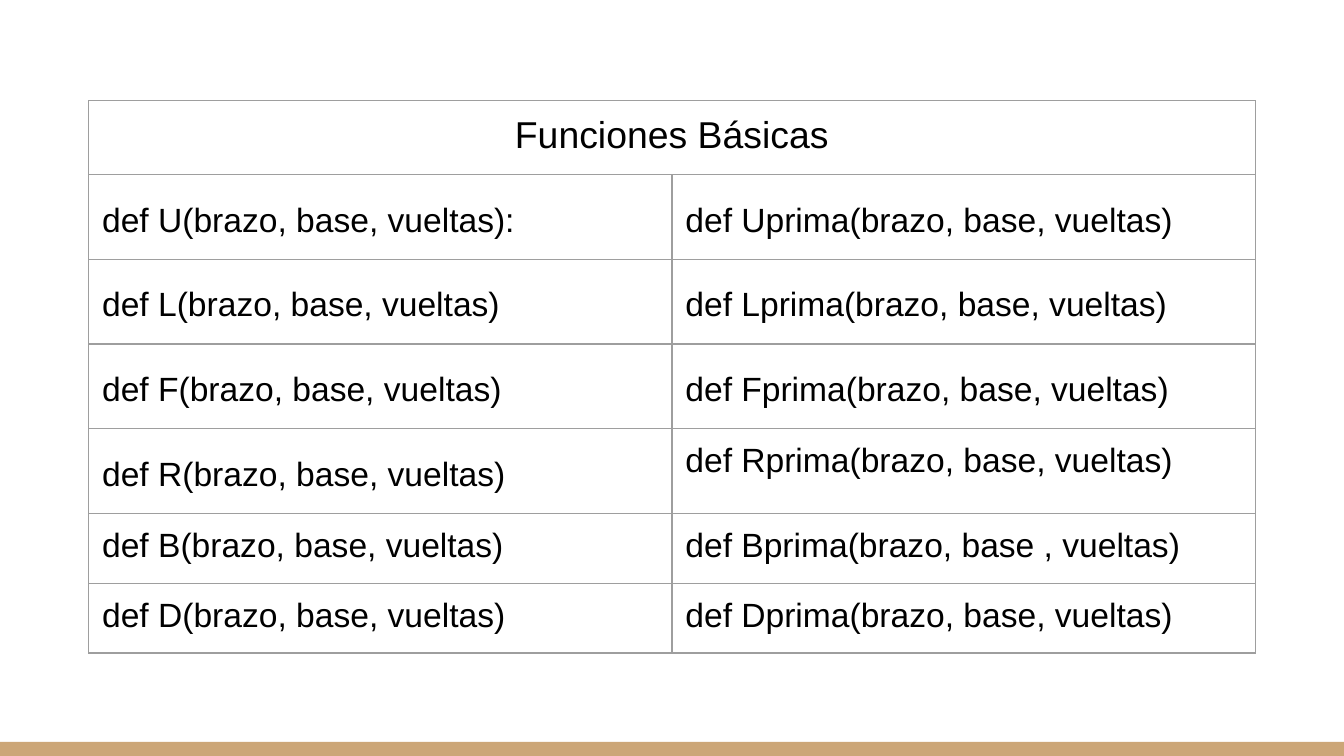
from lxml import etree
from pptx import Presentation
from pptx.dml.color import RGBColor
from pptx.enum.shapes import MSO_SHAPE
from pptx.enum.text import PP_ALIGN
from pptx.oxml.ns import qn
from pptx.util import Inches, Pt

RECT = MSO_SHAPE.RECTANGLE
LEFT, CENTER = PP_ALIGN.LEFT, PP_ALIGN.CENTER

TITLE = "Funciones Básicas"
ROWS = [
    ("def U(brazo, base, vueltas):", "def Uprima(brazo, base, vueltas)"),
    ("def L(brazo, base, vueltas)", "def Lprima(brazo, base, vueltas)"),
    ("def F(brazo, base, vueltas)", "def Fprima(brazo, base, vueltas)"),
    ("def R(brazo, base, vueltas)", "def Rprima(brazo, base, vueltas)"),
    ("def B(brazo, base, vueltas)", "def Bprima(brazo, base , vueltas)"),
    ("def D(brazo, base, vueltas)", "def Dprima(brazo, base, vueltas)"),
]
WIDE = Inches(10)
HIGH = WIDE * 9 // 16
HEIGHTS = [0.55] + [0.63] * 4 + [0.52] * 2
LOOSE = {(r, c) for r in range(1, 5) for c in range(2)} - {(4, 1)}
WIDTH = 4.34
INSET = {f"margin_{side}": Inches(0.1) for side in ("left", "right", "top", "bottom")}
BLACK, GRAY, TAN = "000000", "9E9E9E", "CCA677"


def color(code):
    return RGBColor.from_string(code)


def border(cell):
    props = cell._tc.get_or_add_tcPr()
    for tag in ("a:lnL", "a:lnR", "a:lnT", "a:lnB"):
        line = etree.SubElement(props, qn(tag), w=str(Pt(0.75)))
        fill = etree.SubElement(line, qn("a:solidFill"))
        etree.SubElement(fill, qn("a:srgbClr"), val=GRAY)


def write(cell, text, size, align=LEFT, space=1.0):
    para = cell.text_frame.paragraphs[0]
    para.alignment, para.line_spacing = align, space
    run = para.add_run()
    run.text = text
    for key, value in {"name": "Arial", "size": Pt(size), "bold": False}.items():
        setattr(run.font, key, value)
    run.font.color.rgb = color(BLACK)


def main():
    deck = Presentation()
    deck.slide_width, deck.slide_height = WIDE, HIGH
    slide = deck.slides.add_slide(deck.slide_layouts[6])

    top = Inches(5.52)
    band = slide.shapes.add_shape(RECT, 0, top, WIDE, HIGH - top)
    band.shadow.inherit = False
    band.fill.solid()
    band.fill.fore_color.rgb = color(TAN)
    band.line.fill.background()

    table = slide.shapes.add_table(
        len(HEIGHTS), 2, Inches(0.66), Inches(0.75),
        Inches(2 * WIDTH), Inches(sum(HEIGHTS))).table
    table.first_row = table.horz_banding = False
    for col in table.columns:
        col.width = Inches(WIDTH)
    for row, height in zip(table.rows, HEIGHTS):
        row.height = Inches(height)
    for cell in table.iter_cells():
        border(cell)
        cell.fill.background()
        for key, value in INSET.items():
            setattr(cell, key, value)

    head = table.cell(0, 0)
    head.merge(table.cell(0, 1))
    write(head, TITLE, 20, CENTER)
    for r, texts in enumerate(ROWS, 1):
        for c, text in enumerate(texts):
            write(table.cell(r, c), text, 18, space=1.36 if (r, c) in LOOSE else 1.0)

    deck.save("out.pptx")


if __name__ == "__main__":
    main()
